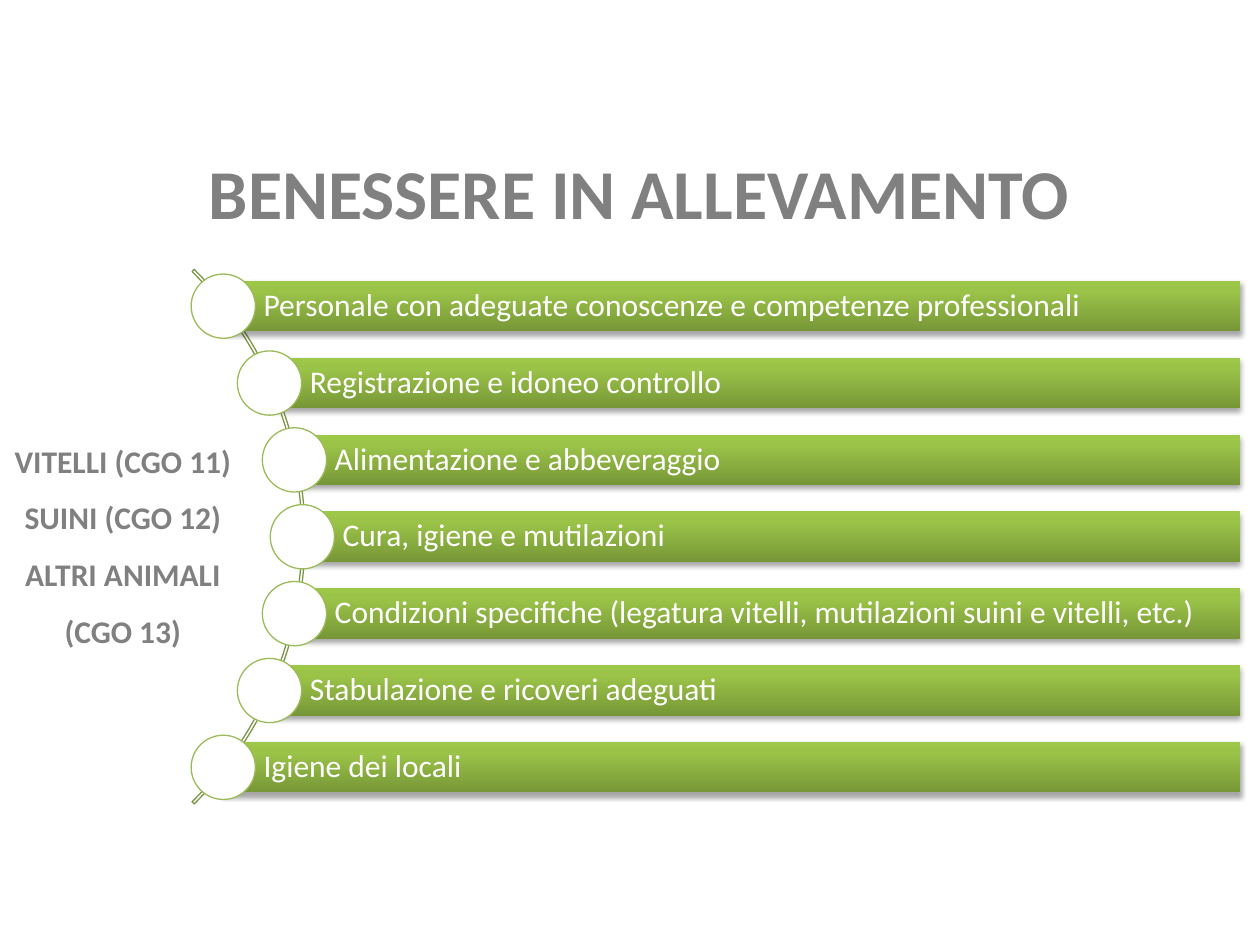
import math

import lxml.etree
import pptx
import pptx.dml.color
import pptx.enum.shapes
import pptx.enum.text
import pptx.oxml.ns
import pptx.util

Inches, Pt = pptx.util.Inches, pptx.util.Pt
qn = pptx.oxml.ns.qn
SHAPE = pptx.enum.shapes.MSO_SHAPE
ALIGN = pptx.enum.text.PP_ALIGN
MIDDLE = pptx.enum.text.MSO_ANCHOR.MIDDLE

TITLE = "BENESSERE IN ALLEVAMENTO"
ANIMALS = ["VITELLI (CGO 11)", "SUINI (CGO 12)", "ALTRI ANIMALI", "(CGO 13)"]
REQUIREMENTS = [
    "Personale con adeguate conoscenze e competenze professionali",
    "Registrazione e idoneo controllo",
    "Alimentazione e abbeveraggio",
    "Cura, igiene e mutilazioni",
    "Condizioni specifiche (legatura vitelli, mutilazioni suini e vitelli, etc.)",
    "Stabulazione e ricoveri adeguati",
    "Igiene dei locali",
]
COLORS = {"grey": "808080", "white": "FFFFFF", "arc": "7C9647", "ring": "9BBB59", "shadow": "000000"}
BAR_STOPS = [(0, "779737"), (80, "9BC348"), (100, "9DC746")]

CENTER_X, CENTER_Y = -0.58, 4.26
ARC_RADIUS, NODE_RADIUS = 3, 2.98
PITCH, BAR_HEIGHT, BAR_RIGHT, CIRCLE = 0.61, 0.4, 9.84, 0.51


def rgb(name):
    """Return the named palette colour."""
    return pptx.dml.color.RGBColor.from_string(COLORS[name])


def add_plain_shape(slide, kind, left, top, width, height, fill=None, line=None):
    """Add a shape without shadow, with an optional fill and outline."""
    shape = slide.shapes.add_shape(kind, Inches(left), Inches(top), Inches(width), Inches(height))
    shape.shadow.inherit = False
    if fill:
        shape.fill.solid()
        shape.fill.fore_color.rgb = rgb(fill)
    else:
        shape.fill.background()
    if line:
        shape.line.color.rgb = rgb(line)
        shape.line.width = Pt(0.75)
    else:
        shape.line.fill.background()
    return shape


def add_color(parent, value):
    """Append an RGB colour element to the parent."""
    return lxml.etree.SubElement(parent, qn("a:srgbClr"), val=value)


def style_bar(bar):
    """Give a bar its vertical gradient and soft shadow."""
    bar.fill.gradient()
    bar.fill.gradient_angle = 90
    stops = bar.element.spPr.find(".//" + qn("a:gsLst"))
    for stop in list(stops):
        stops.remove(stop)
    for position, color in BAR_STOPS:
        add_color(lxml.etree.SubElement(stops, qn("a:gs"), pos=str(position * 1000)), color)
    effects = bar.element.spPr.find(qn("a:effectLst"))
    shadow = lxml.etree.SubElement(
        effects, qn("a:outerShdw"), blurRad="40000", dist="23000", dir="5400000", rotWithShape="0"
    )
    lxml.etree.SubElement(add_color(shadow, COLORS["shadow"]), qn("a:alpha"), val="35000")


def write(frame, lines, size, color, bold, alignment, spacing):
    """Write one formatted paragraph per line, centred vertically."""
    frame.text = "\n".join(lines)
    frame.word_wrap = True
    frame.vertical_anchor = MIDDLE
    for paragraph in frame.paragraphs:
        paragraph.alignment = alignment
        paragraph.line_spacing = spacing
        paragraph.font.name = "Calibri"
        paragraph.font.size = Pt(size)
        paragraph.font.bold = bold
        paragraph.font.color.rgb = rgb(color)


def add_requirement(slide, index, text):
    """Add a bar and its circle, centred on the arc."""
    offset = (index - (len(REQUIREMENTS) - 1) / 2) * PITCH
    x = CENTER_X + math.sqrt(NODE_RADIUS**2 - offset**2)
    y = CENTER_Y + offset
    bar = add_plain_shape(slide, SHAPE.RECTANGLE, x, y - BAR_HEIGHT / 2, BAR_RIGHT - x, BAR_HEIGHT)
    style_bar(bar)
    frame = bar.text_frame
    write(frame, [text], 18, "white", False, ALIGN.LEFT, 0.9)
    frame.margin_left = Inches(0.32)
    frame.margin_top = frame.margin_right = frame.margin_bottom = Inches(0.05)
    add_plain_shape(
        slide, SHAPE.OVAL, x - CIRCLE / 2, y - CIRCLE / 2, CIRCLE, CIRCLE, "white", "ring"
    )


def main():
    """Build the slide and save it."""
    presentation = pptx.Presentation()
    presentation.slide_width, presentation.slide_height = Inches(10), Inches(7.5)
    slide = presentation.slides.add_slide(presentation.slide_layouts[5])

    title = slide.shapes.title
    title.left, title.top, title.width, title.height = map(Inches, (0.57, 0.76, 9, 1.18))
    write(title.text_frame, [TITLE], 40, "grey", True, ALIGN.CENTER, 1.5)

    arc = add_plain_shape(
        slide, SHAPE.BLOCK_ARC, CENTER_X - ARC_RADIUS, CENTER_Y - ARC_RADIUS,
        2 * ARC_RADIUS, 2 * ARC_RADIUS, line="arc",
    )
    for index, value in enumerate((189, 27, 0.004)):
        arc.adjustments[index] = value

    for index, text in enumerate(REQUIREMENTS):
        add_requirement(slide, index, text)

    animals = slide.shapes.add_textbox(*map(Inches, (-0.16, 3.12, 2.27, 2.27)))
    write(animals.text_frame, ANIMALS, 18, "grey", True, ALIGN.CENTER, 1.5)

    presentation.save("out.pptx")


if __name__ == "__main__":
    main()
